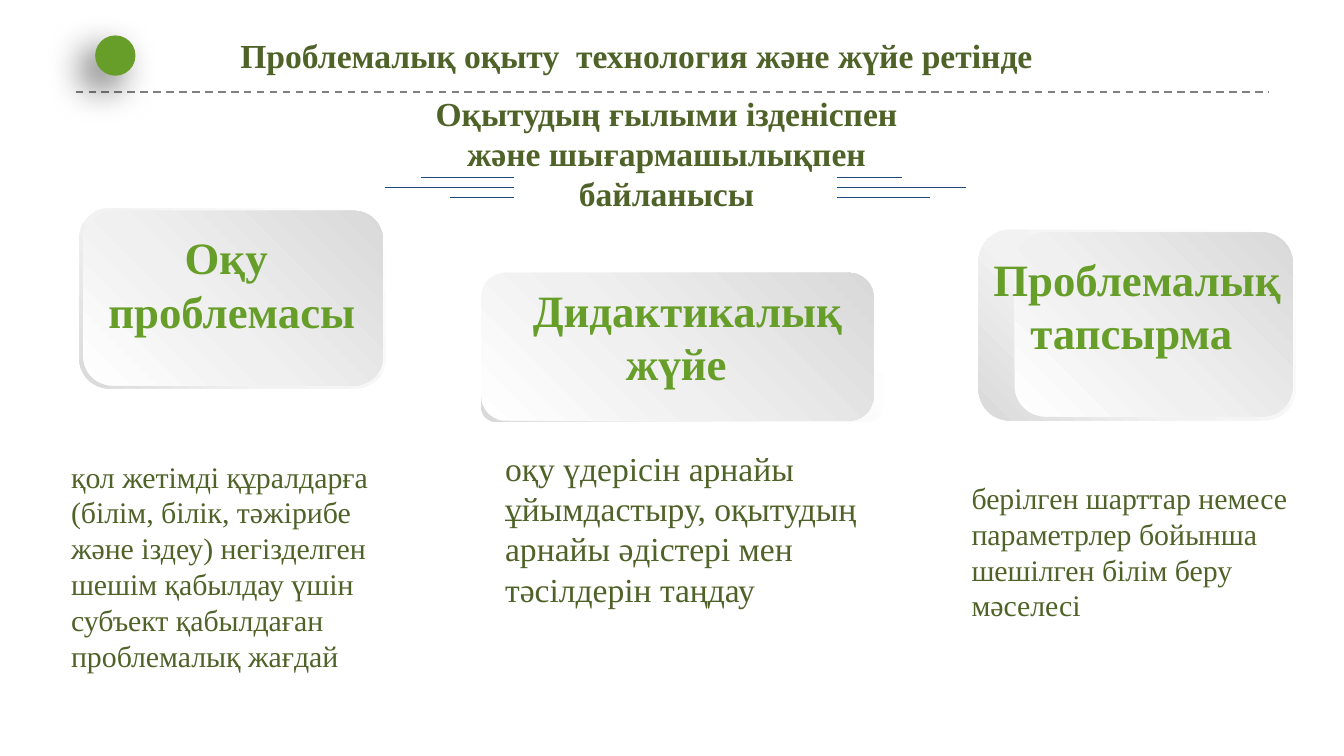
from copy import deepcopy
from lxml.etree import SubElement
from pptx import Presentation
from pptx.dml.color import RGBColor
from pptx.enum.dml import MSO_LINE
from pptx.enum.shapes import MSO_CONNECTOR, MSO_SHAPE
from pptx.enum.text import MSO_AUTO_SIZE, PP_ALIGN
from pptx.oxml.ns import qn
from pptx.util import Pt

HUES = {"olive": "4F6228", "green": "679E2A", "navy": "1F497D", "gray": "808080",
        "white": "FFFFFF", "pale": "F2F2F2", "mist": "F0F0F0", "silver": "D9D9D9"}
RGB = {name: RGBColor.from_string(code) for name, code in HUES.items()}

deck = Presentation()
deck.slide_width, deck.slide_height = Pt(720), Pt(405)
slide = deck.slides.add_slide(deck.slide_layouts[6])
shapes = slide.shapes


def add_text(area, lines, size, hue="olive", bold=False, align=PP_ALIGN.LEFT, inset=None):
    """Add a wrapped text box; inset None keeps the default margins."""
    frame = shapes.add_textbox(*map(Pt, area)).text_frame
    frame.word_wrap = True
    frame.auto_size = MSO_AUTO_SIZE.SHAPE_TO_FIT_TEXT
    if inset is not None:
        for side in ("left", "top", "right", "bottom"):
            setattr(frame, f"margin_{side}", Pt(inset))
    frame.text = "\n".join(lines)
    style = {"name": "Times New Roman", "size": Pt(size), "bold": bold}
    for para in frame.paragraphs:
        para.alignment = align
        for run in para.runs:
            for key, value in style.items():
                setattr(run.font, key, value)
            run.font.color.rgb = RGB[hue]


def add_line(start, end, y, hue, width):
    """Add a level line without a shadow."""
    line = shapes.add_connector(MSO_CONNECTOR.STRAIGHT, Pt(start), Pt(y), Pt(end), Pt(y))
    line.line.color.rgb = RGB[hue]
    line.line.width = Pt(width)
    SubElement(line._element.spPr, qn("a:effectLst"))
    return line


# Header rule and dot
add_line(40.5, 679.5, 49.2, "gray", 1).line.dash_style = MSO_LINE.DASH
dot = shapes.add_shape(MSO_SHAPE.OVAL, Pt(51), Pt(19), Pt(21.6), Pt(21.6))
dot.fill.solid()
dot.fill.fore_color.rgb = RGB["green"]
dot.line.fill.background()
effects = SubElement(dot._element.spPr, qn("a:effectLst"))
shade = SubElement(effects, qn("a:outerShdw"), blurRad=str(Pt(20)), dist=str(Pt(10)),
                   dir=str(135 * 60000), algn="ctr", rotWithShape="0")
tone = SubElement(shade, qn("a:srgbClr"), val="000000")
SubElement(tone, qn("a:alpha"), val="60000")

add_text((212.4, 49.7, 289.4, 65.5),
         ["Оқытудың ғылыми ізденіспен және шығармашылықпен байланысы"],
         18, bold=True, align=PP_ALIGN.CENTER, inset=0)

# Rays on both sides of the heading
reach = (50, 69, 34.5)
for y, left, right in zip((95, 100.5, 106), reach, reversed(reach)):
    add_line(275.5, 275.5 - left, y, "navy", 0.5)
    add_line(448.5, 448.5 + right, y, "navy", 0.5)

# Cards: back plate, front plate, label area, label, body area, body size, body
cards = [
    ((42.5, 111.6, 164.2, 96.5), (44.6, 113, 160.6, 93.6),
     (48.2, 123.1, 151.9, 58.3), ["Оқу  проблемасы"],
     (31, 241.9, 187.2, 123.8), 16,
     "қол жетімді құралдарға (білім, білік, тәжірибе және іздеу) негізделген "
     "шешім қабылдау үшін субъект қабылдаған проблемалық жағдай"),
    ((257.8, 177.8, 215.3, 48.2), (257.8, 146.2, 210.2, 79.2),
     (263.5, 151.2, 209.5, 58.3), ["Дидактикалық", "жүйе  "],
     (263.5, 236.2, 209.5, 94.3), 18,
     "оқу үдерісін арнайы ұйымдастыру, оқытудың арнайы әдістері мен тәсілдерін таңдау"),
    ((524.2, 123.1, 169.9, 102.2), (543.6, 124.6, 149, 98.6),
     (529.9, 134.6, 158.4, 58.3), ["Проблемалық тапсырма "],
     (513.4, 253.4, 187.2, 85), 16,
     "берілген шарттар немесе параметрлер бойынша шешілген білім беру мәселесі"),
]
for back, front, spot, label, area, size, body in cards:
    for box, angle, middle, hue in ((back, 225, 0.62, "pale"), (front, 45, 0.42, "mist")):
        plate = shapes.add_shape(MSO_SHAPE.ROUNDED_RECTANGLE, *map(Pt, box))
        plate.shadow.inherit = False
        plate.line.fill.background()
        plate.fill.gradient()
        plate.fill.gradient_angle = angle
        first = plate._element.spPr.find(".//" + qn("a:gs"))
        first.addnext(deepcopy(first))
        stops = ((0, "white"), (middle, hue), (1, "silver"))
        for stop, (place, shade) in zip(plate.fill.gradient_stops, stops):
            stop.position = place
            stop.color.rgb = RGB[shade]
    add_text(spot, label, 24, "green", True, PP_ALIGN.CENTER, 0)
    add_text(area, [body], size)

add_text((121.7, 15.1, 493.2, 28.8),
         ["Проблемалық оқыту  технология және жүйе ретінде"], 18, bold=True)

deck.save("out.pptx")
